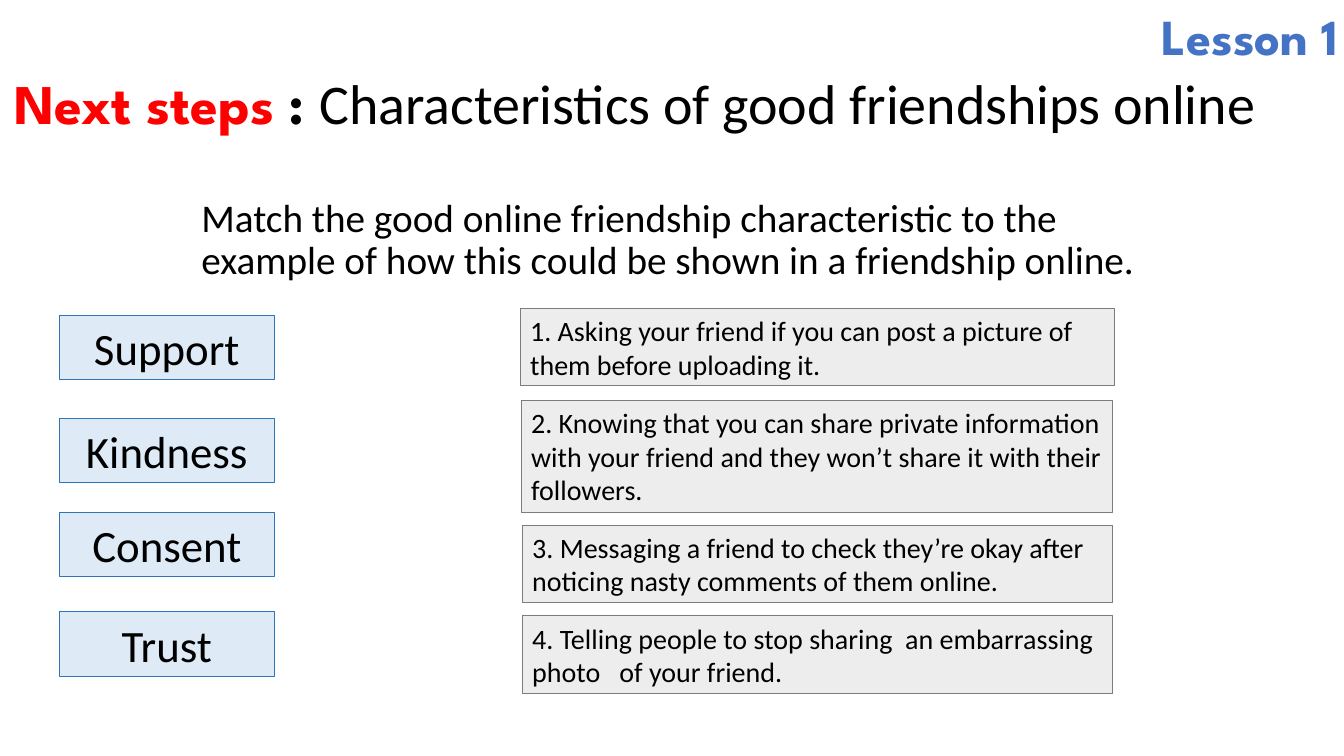
from dataclasses import dataclass

from pptx import Presentation
from pptx import util as u
from pptx.dml import color
from pptx.enum import shapes, text


@dataclass(frozen=True)
class Theme:
    """Colours, fonts and type sizes of the slide."""
    ink: str = "000000"
    red: str = "FF0000"
    blue: str = "4472C4"
    sky: str = "DEEBF7"
    sky_edge: str = "2E75B6"
    grey: str = "EDEDED"
    grey_edge: str = "7C7C7C"
    body: str = "Calibri"
    head: str = "League Spartan"
    title: int = 40
    lesson: int = 36
    term: int = 32
    task: int = 28
    case: int = 20


T = Theme()
LEFT, MID, RIGHT = text.PP_ALIGN.LEFT, text.PP_ALIGN.CENTER, text.PP_ALIGN.RIGHT
TOP, CENTRE = text.MSO_ANCHOR.TOP, text.MSO_ANCHOR.MIDDLE

TERMS = [("Support", 3.13), ("Kindness", 4.15), ("Consent", 5.08), ("Trust", 6.07)]
CASES = [
    ("1. Asking your friend if you can post a picture of them before uploading it.",
     (5.16, 3.06, 5.89, 0.77)),
    ("2. Knowing that you can share private information with your friend "
     "and they won’t share it with their followers.", (5.17, 3.97, 5.86, 1.11)),
    ("3. Messaging a friend to check they’re okay after noticing nasty comments "
     "of them online.", (5.18, 5.21, 5.85, 0.77)),
    ("4. Telling people to stop sharing  an embarrassing photo   of your friend.",
     (5.18, 6.11, 5.85, 0.77)),
]


def rgb(code):
    """Turn a hex code into a colour."""
    return color.RGBColor.from_string(code)


def inches(box):
    """Turn a box of numbers into lengths."""
    return [u.Inches(side) for side in box]


def write(shape, words, size, font=T.body, ink=T.ink, bold=False,
          align=LEFT, anchor=TOP, space=1.0):
    """Add a run of text to a shape in the given format."""
    frame = shape.text_frame
    frame.word_wrap = True
    frame.auto_size = text.MSO_AUTO_SIZE.NONE
    frame.vertical_anchor = anchor
    para = frame.paragraphs[0]
    para.alignment = align
    para.line_spacing = space
    run = para.add_run()
    run.text = words
    run.font.name = font
    run.font.size = u.Pt(size)
    run.font.bold = bold
    run.font.color.rgb = rgb(ink)


def label(slide, box, words, size, **style):
    """Place plain text in a box."""
    write(slide.shapes.add_textbox(*inches(box)), words, size, **style)


def card(slide, box, words, size, fill, edge, align=LEFT):
    """Place an outlined card with text in a box."""
    shape = slide.shapes.add_shape(shapes.MSO_SHAPE.RECTANGLE, *inches(box))
    shape.shadow.inherit = False
    shape.fill.solid()
    shape.fill.fore_color.rgb = rgb(fill)
    shape.line.color.rgb = rgb(edge)
    shape.line.width = u.Pt(0.75)
    write(shape, words, size, align=align, anchor=CENTRE)


def header(slide, box):
    """Fill the title placeholder and place it in a box."""
    title = slide.shapes.title
    title.left, title.top, title.width, title.height = inches(box)
    write(title, "Next steps ", T.title, font=T.head, ink=T.red, bold=True, space=0.9)
    write(title, ": ", T.title, font=T.head, bold=True, space=0.9)
    write(title, "Characteristics of good friendships online", T.title, space=0.9)


def terms(slide, left, width, height):
    """Stack the friendship terms in a column."""
    for words, top in TERMS:
        card(slide, (left, top, width, height), words, T.term, T.sky, T.sky_edge, MID)


def cases(slide):
    """Place the numbered examples."""
    for words, box in CASES:
        card(slide, box, words, T.case, T.grey, T.grey_edge)


def main():
    """Build the slide and save it."""
    deck = Presentation()
    deck.slide_width, deck.slide_height = inches((13.33, 7.5))
    slide = deck.slides.add_slide(deck.slide_layouts[5])
    header(slide, (0.04, 0.71, 13.29, 1.14))
    label(slide, (1.9, 1.92, 9.54, 1.14),
          "Match the good online friendship characteristic to the example "
          "of how this could be shown in a friendship online.", T.task, space=0.9)
    cases(slide)
    terms(slide, 0.59, 2.13, 0.64)
    label(slide, (10.33, 0, 3.04, 0.71), "Lesson 1", T.lesson,
          font=T.head, ink=T.blue, bold=True, align=RIGHT)
    deck.save("out.pptx")


if __name__ == "__main__":
    main()
